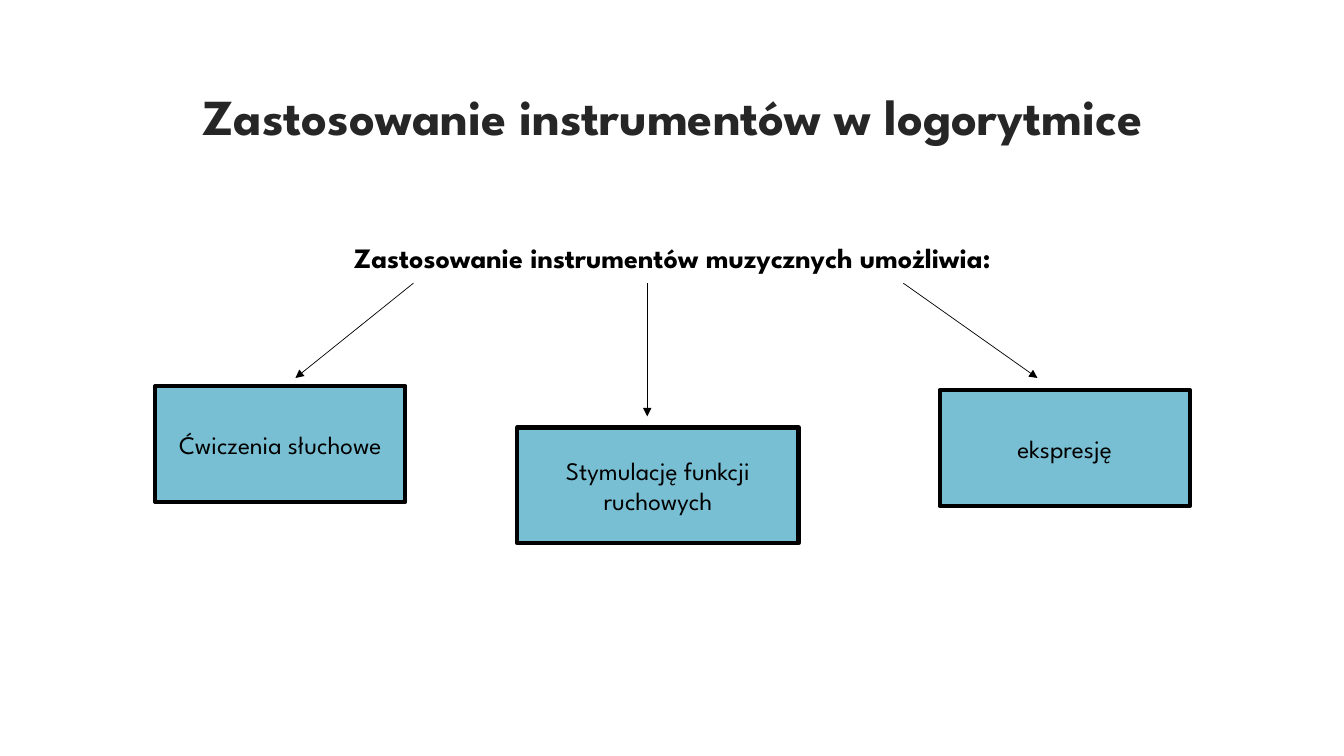
from dataclasses import dataclass

import pptx
import pptx.dml.color
import pptx.enum.shapes
import pptx.enum.text
import pptx.oxml.ns
import pptx.shapes.autoshape
import pptx.slide
import pptx.text.text
import pptx.util
from lxml import etree

Inches = pptx.util.Inches
Pt = pptx.util.Pt
RGBColor = pptx.dml.color.RGBColor
MIDDLE = pptx.enum.text.MSO_ANCHOR.MIDDLE
TOP = pptx.enum.text.MSO_ANCHOR.TOP
CENTER = pptx.enum.text.PP_ALIGN.CENTER

BLACK = RGBColor(0x00, 0x00, 0x00)
CHARCOAL = RGBColor(0x26, 0x26, 0x26)
TEAL = RGBColor(0x78, 0xBF, 0xD3)
WHITE = RGBColor(0xFF, 0xFF, 0xFF)
FONT_NAME = "League Spartan"
ARROW_TOP = 2.81
BENEFIT_HEIGHT = 1.15


@dataclass(frozen=True)
class Benefit:
    label: str
    left: float
    top: float
    width: float


@dataclass(frozen=True)
class Arrow:
    start_x: float
    end_x: float
    end_y: float


BENEFITS = [
    Benefit("Ćwiczenia słuchowe", 1.54, 3.83, 2.48),
    Benefit("Stymulację funkcji ruchowych", 5.13, 4.24, 2.79),
    Benefit("ekspresję", 9.32, 3.87, 2.48),
]
ARROWS = [Arrow(4.1, 2.93, 3.75), Arrow(6.42, 6.42, 4.13), Arrow(8.96, 10.29, 3.75)]


def apply_format(target: object, values: dict[str, object]) -> None:
    for attribute, value in values.items():
        setattr(target, attribute, value)


def write(
    holder: pptx.shapes.autoshape.Shape,
    wording: str,
    size: float,
    color: RGBColor,
    bold: bool,
    spacing: float,
    frame_format: dict[str, object],
) -> pptx.text.text._Paragraph:
    frame = holder.text_frame
    apply_format(
        frame,
        {"word_wrap": True, "auto_size": pptx.enum.text.MSO_AUTO_SIZE.NONE, **frame_format},
    )
    frame.text = wording
    line = frame.paragraphs[0]
    apply_format(
        line,
        {"alignment": CENTER, "line_spacing": spacing, "space_before": Pt(0)},
    )
    font = line.runs[0].font
    apply_format(font, {"name": FONT_NAME, "size": Pt(size), "bold": bold})
    font.color.rgb = color
    return line


def place(holder: pptx.shapes.autoshape.Shape, top: float, height: float) -> None:
    apply_format(
        holder,
        {"left": Inches(1.17), "top": Inches(top), "width": Inches(11), "height": Inches(height)},
    )


def draw_arrow(slide: pptx.slide.Slide, arrow: Arrow) -> None:
    pointer = slide.shapes.add_connector(
        pptx.enum.shapes.MSO_CONNECTOR.STRAIGHT,
        Inches(arrow.start_x),
        Inches(ARROW_TOP),
        Inches(arrow.end_x),
        Inches(arrow.end_y),
    )
    pointer.line.color.rgb = BLACK
    pointer.line.width = Pt(0.5)
    outline = pointer.line._get_or_add_ln()
    etree.SubElement(outline, pptx.oxml.ns.qn("a:tailEnd"), type="triangle")
    etree.SubElement(pointer._element.spPr, pptx.oxml.ns.qn("a:effectLst"))


def draw_benefit(slide: pptx.slide.Slide, benefit: Benefit) -> None:
    box = slide.shapes.add_shape(
        pptx.enum.shapes.MSO_SHAPE.RECTANGLE,
        Inches(benefit.left),
        Inches(benefit.top),
        Inches(benefit.width),
        Inches(BENEFIT_HEIGHT),
    )
    box.shadow.inherit = False
    box.fill.solid()
    box.fill.fore_color.rgb = TEAL
    box.line.color.rgb = BLACK
    box.line.width = Pt(3)
    write(box, benefit.label, 18, BLACK, False, 1.0, {"vertical_anchor": MIDDLE})


def main() -> None:
    deck = pptx.Presentation()
    apply_format(deck, {"slide_width": Inches(13.33), "slide_height": Inches(7.5)})
    slide = deck.slides.add_slide(deck.slide_layouts[1])
    slide.background.fill.solid()
    slide.background.fill.fore_color.rgb = WHITE

    heading = slide.shapes.title
    place(heading, 0.7, 1.5)
    write(
        heading,
        "Zastosowanie instrumentów w logorytmice",
        36,
        CHARCOAL,
        True,
        0.9,
        {"vertical_anchor": MIDDLE, "margin_bottom": Inches(0.59)},
    )

    introduction = slide.placeholders[1]
    place(introduction, 2.3, 4.21)
    statement = write(
        introduction,
        "Zastosowanie instrumentów muzycznych umożliwia:",
        20,
        BLACK,
        True,
        1.1,
        {"vertical_anchor": TOP},
    )
    properties = statement._p.get_or_add_pPr()
    properties.set("marL", "0")
    properties.set("indent", "0")
    etree.SubElement(properties, pptx.oxml.ns.qn("a:buNone"))

    for arrow in ARROWS:
        draw_arrow(slide, arrow)
    for benefit in BENEFITS:
        draw_benefit(slide, benefit)
    deck.save("out.pptx")


if __name__ == "__main__":
    main()
